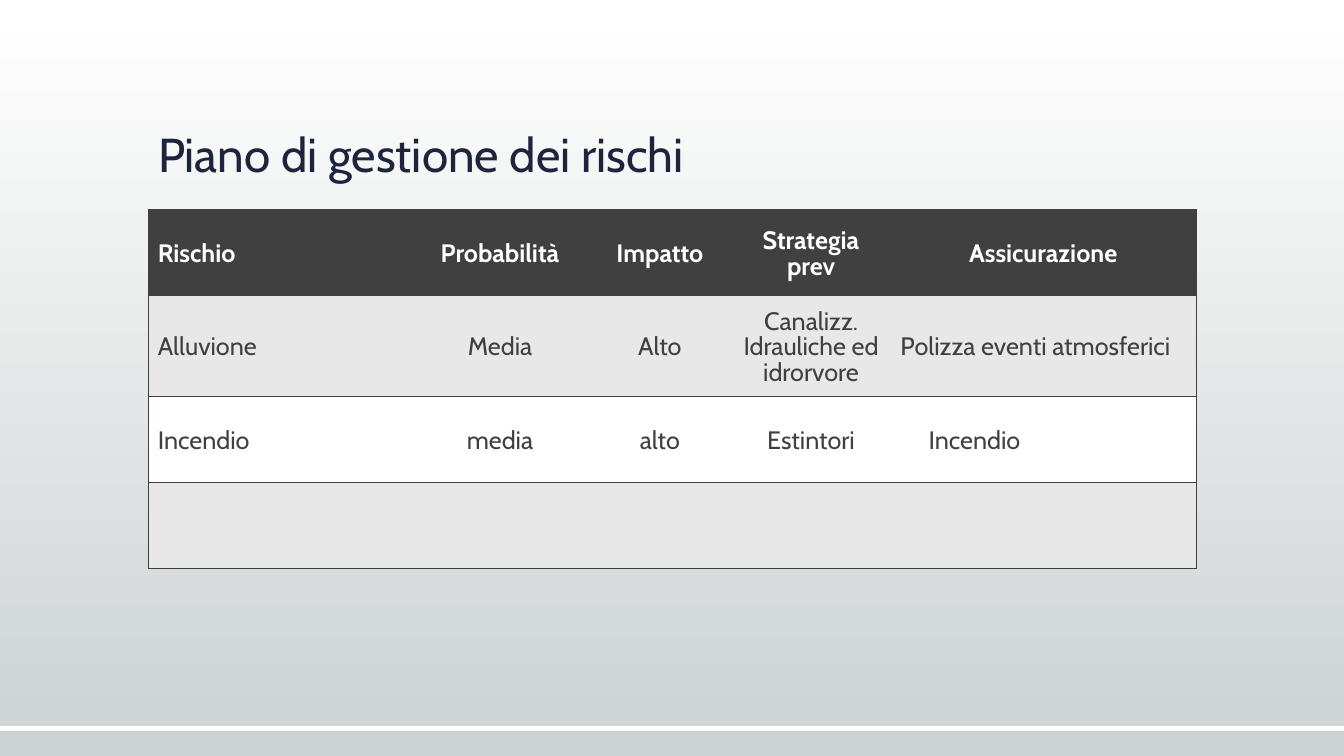
from dataclasses import dataclass

from lxml import etree
from pptx import Presentation
from pptx.dml.color import RGBColor
from pptx.enum.shapes import MSO_SHAPE
from pptx.enum.text import MSO_ANCHOR, MSO_AUTO_SIZE, PP_ALIGN
from pptx.oxml.ns import qn
from pptx.util import Cm, Pt

LEFT, CENTER = PP_ALIGN.LEFT, PP_ALIGN.CENTER
MIDDLE, BOTTOM = MSO_ANCHOR.MIDDLE, MSO_ANCHOR.BOTTOM
NO_AUTOFIT = MSO_AUTO_SIZE.NONE
RECTANGLE = MSO_SHAPE.RECTANGLE

FONT = "Cabin"
WHITE, DARK, BAND, NAVY, MIST = "FFFFFF", "404040", "E8E8E8", "1D243C", "CDD2D2"
PAGE_WIDTH, PAGE_HEIGHT = Cm(33.88), Cm(19.05)
CONTENT_LEFT, CONTENT_WIDTH = Cm(3.73), Cm(26.42)
COLUMN_WIDTHS = (6.65, 4.45, 3.61, 4.01, 7.7)
BORDER_WIDTH = Pt(0.75)


@dataclass(frozen=True)
class RiskRow:
    texts: tuple[str, ...]
    height: float
    fill: str
    color: str = DARK
    bold: bool = False
    last_align: PP_ALIGN = LEFT
    last_margin: float = 0.25


ROWS = (
    RiskRow(("Rischio", "Probabilità", "Impatto", "Strategia\nprev", "Assicurazione"),
            2.17, DARK, WHITE, True, CENTER),
    RiskRow(("Alluvione", "Media", "Alto", "Canalizz. Idrauliche ed idrorvore",
             "Polizza eventi atmosferici"), 2.54, BAND),
    RiskRow(("Incendio", "media", "alto", "Estintori", "Incendio"),
            2.17, WHITE, last_margin=0.96),
    RiskRow(("",) * 5, 2.17, BAND),
)


def rgb(value: str) -> RGBColor:
    return RGBColor.from_string(value)


def format_text(frame, size: float, color: str, bold: bool, align: PP_ALIGN,
                spacing: float) -> None:
    for paragraph in frame.paragraphs:
        paragraph.alignment = align
        paragraph.line_spacing = spacing
        font = paragraph.font
        font.name, font.size, font.bold = FONT, Pt(size), bold
        font.color.rgb = rgb(color)


def set_borders(cell, visible_sides: str) -> None:
    """Draw the sides named by letter (L, R, T, B) and clear the others."""
    properties = cell._tc.get_or_add_tcPr()
    for index, side in enumerate("LRTB"):
        line = etree.Element(qn(f"a:ln{side}"), w=str(BORDER_WIDTH))
        if side in visible_sides:
            fill = etree.SubElement(line, qn("a:solidFill"))
            etree.SubElement(fill, qn("a:srgbClr"), val=DARK)
        else:
            etree.SubElement(line, qn("a:noFill"))
        properties.insert(index, line)


def add_background(page) -> None:
    fill = page.background.fill
    fill.gradient()
    fill.gradient_angle = 270
    for stop, color in zip(fill.gradient_stops, (WHITE, MIST)):
        stop.color.rgb = rgb(color)
    stripe = page.shapes.add_shape(RECTANGLE, 0, Cm(18.29), PAGE_WIDTH, Cm(0.13))
    stripe.shadow.inherit = False
    stripe.fill.solid()
    stripe.fill.fore_color.rgb = rgb(WHITE)
    stripe.line.fill.background()


def add_title(page) -> None:
    title = page.shapes.title
    title.left, title.top = CONTENT_LEFT, Cm(1.3)
    title.width, title.height = CONTENT_WIDTH, Cm(3.43)
    frame = title.text_frame
    frame.text = "Piano di gestione dei rischi"
    frame.auto_size = NO_AUTOFIT
    frame.vertical_anchor = BOTTOM
    format_text(frame, 34, NAVY, False, LEFT, 0.9)


def add_risk_table(page) -> None:
    height = Cm(sum(row.height for row in ROWS))
    table = page.shapes.add_table(len(ROWS), len(COLUMN_WIDTHS), CONTENT_LEFT,
                                  Cm(5.28), CONTENT_WIDTH, height).table
    table.first_row = table.horz_banding = False
    for column, width in zip(table.columns, COLUMN_WIDTHS):
        column.width = Cm(width)
    last = len(COLUMN_WIDTHS) - 1
    for row_index, row in enumerate(ROWS):
        table.rows[row_index].height = Cm(row.height)
        for column_index, text in enumerate(row.texts):
            cell = table.cell(row_index, column_index)
            cell.text_frame.text = text
            cell.vertical_anchor = MIDDLE
            cell.margin_top, cell.margin_bottom = Cm(0.23), Cm(0.13)
            cell.margin_left = cell.margin_right = Cm(0.25)
            align, sides = CENTER, "TB"
            if column_index == 0:
                align, sides = LEFT, "LTB"
            elif column_index == last:
                align, sides = row.last_align, "RTB"
                cell.margin_left = Cm(row.last_margin)
            format_text(cell.text_frame, 18, row.color, row.bold, align, 0.83)
            cell.fill.solid()
            cell.fill.fore_color.rgb = rgb(row.fill)
            set_borders(cell, sides)


def main() -> None:
    deck = Presentation()
    deck.slide_width, deck.slide_height = PAGE_WIDTH, PAGE_HEIGHT
    page = deck.slides.add_slide(deck.slide_layouts.get_by_name("Title Only"))
    add_background(page)
    add_title(page)
    add_risk_table(page)
    deck.save("out.pptx")


if __name__ == "__main__":
    main()
